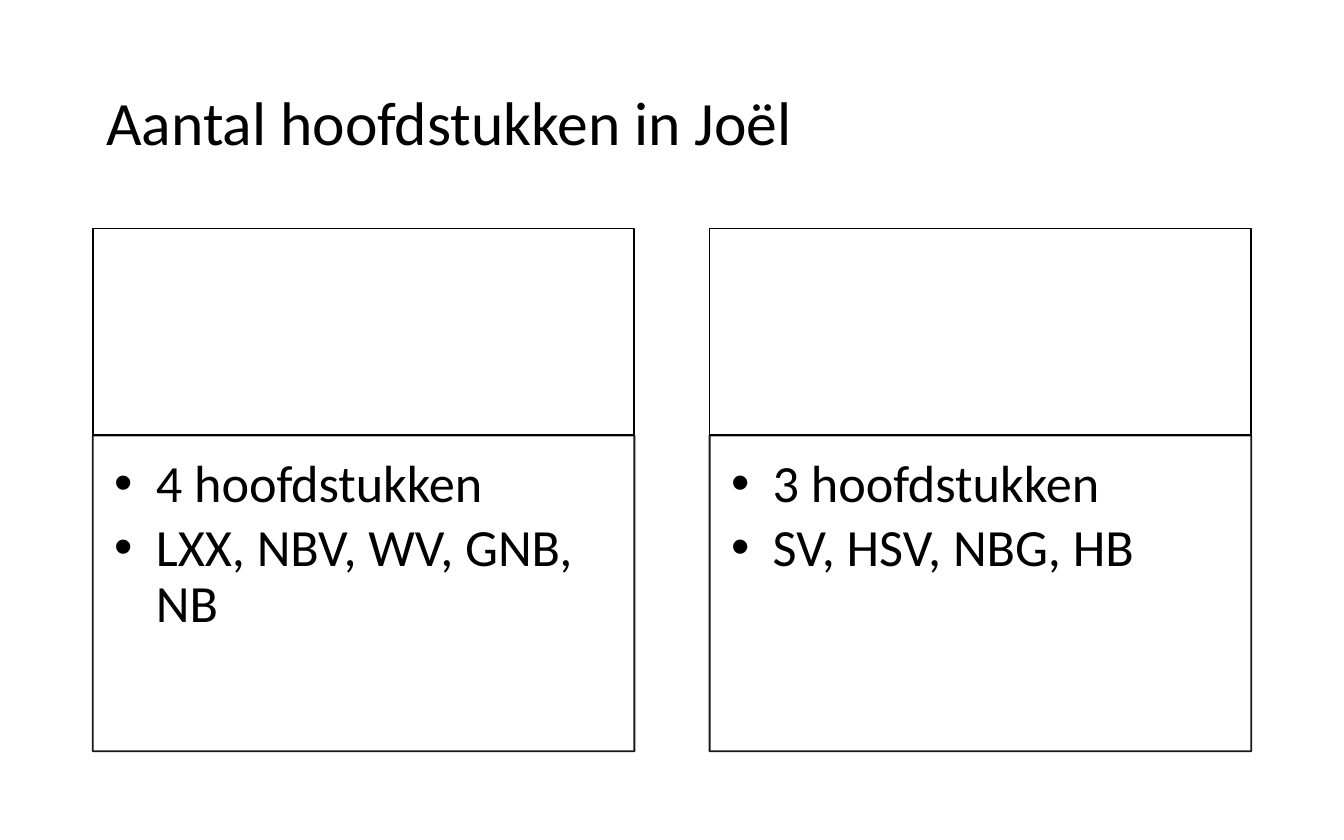
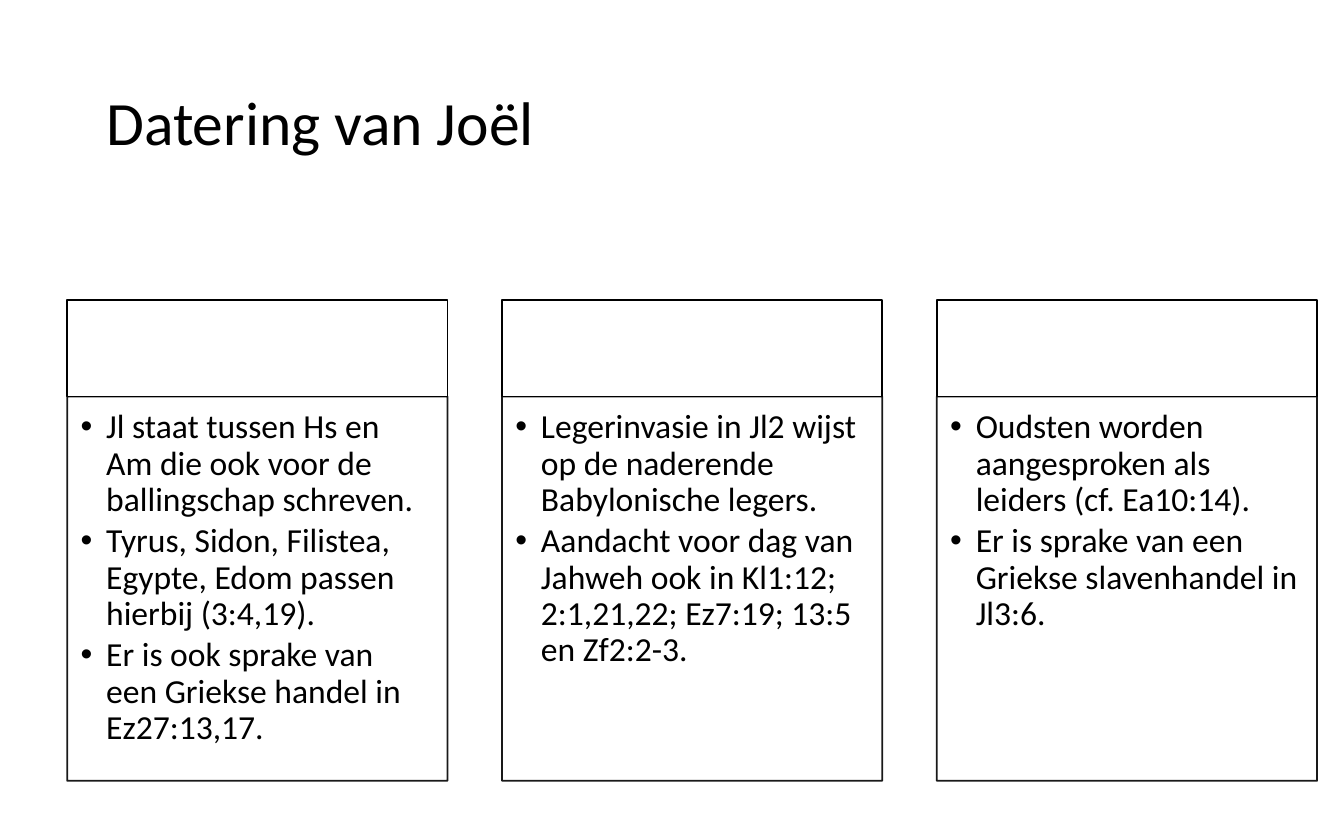
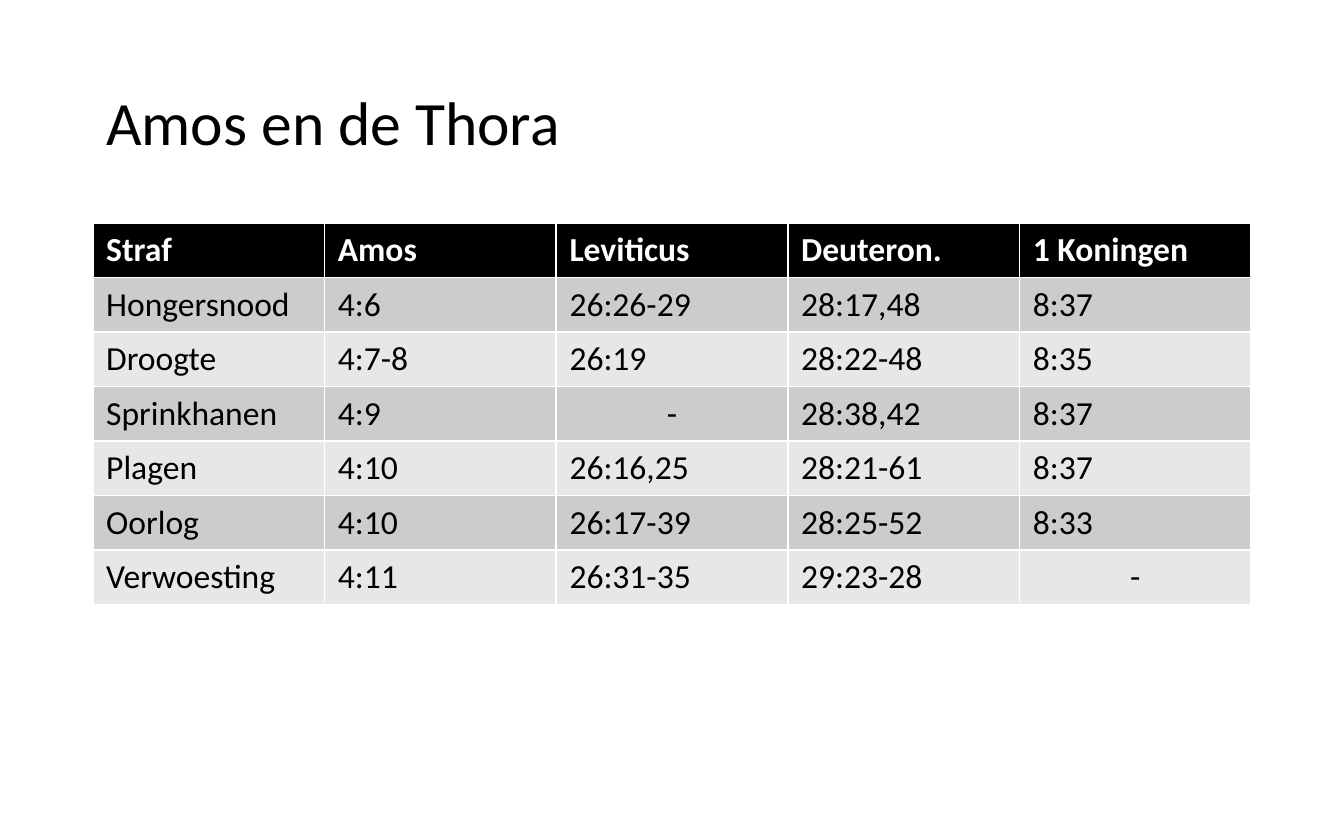
"""Builds three slides on the books of Joël and Amos."""
from lxml.etree import SubElement
from pptx import Presentation
from pptx.dml.color import RGBColor
from pptx.enum.shapes import MSO_SHAPE
from pptx.enum.text import MSO_ANCHOR, MSO_AUTO_SIZE, PP_ALIGN
from pptx.oxml.ns import qn
from pptx.util import Inches, Pt

BLACK = RGBColor(0x00, 0x00, 0x00)
WHITE = RGBColor(0xFF, 0xFF, 0xFF)
DARK_BAND = RGBColor(0xCC, 0xCC, 0xCC)
LIGHT_BAND = RGBColor(0xE7, 0xE7, 0xE7)
FONT = "Calibri"
LEFT, RIGHT = 0.69, 9.31
TWO_CONTENT, COMPARISON, TITLE_ONLY = 3, 4, 5

CHAPTER_COUNTS = [
    ["4 hoofdstukken", "LXX, NBV, WV, GNB, NB"],
    ["3 hoofdstukken", "SV, HSV, NBG, HB"],
]
DATINGS = [
    ["Jl staat tussen Hs en Am die ook voor de ballingschap schreven.",
     "Tyrus, Sidon, Filistea, Egypte, Edom passen hierbij (3:4,19).",
     "Er is ook sprake van een Griekse handel in Ez27:13,17."],
    ["Legerinvasie in Jl2 wijst op de naderende Babylonische legers.",
     "Aandacht voor dag van Jahweh ook in Kl1:12; 2:1,21,22; Ez7:19; 13:5 en Zf2:2-3."],
    ["Oudsten worden aangesproken als leiders (cf. Ea10:14).",
     "Er is sprake van een Griekse slavenhandel in Jl3:6."],
]
PUNISHMENTS = [
    ["Straf", "Amos", "Leviticus", "Deuteron.", "1 Koningen"],
    ["Hongersnood", "4:6", "26:26-29", "28:17,48", "8:37"],
    ["Droogte", "4:7-8", "26:19", "28:22-48", "8:35"],
    ["Sprinkhanen", "4:9", "-", "28:38,42", "8:37"],
    ["Plagen", "4:10", "26:16,25", "28:21-61", "8:37"],
    ["Oorlog", "4:10", "26:17-39", "28:25-52", "8:33"],
    ["Verwoesting", "4:11", "26:31-35", "29:23-28", "-"],
]


def write(frame, lines, *, size=18, color=BLACK, bold=False,
          align=PP_ALIGN.LEFT, spacing=1.0, indent=None):
    """Fill a text frame with one paragraph per line, bulleted if indented."""
    frame.word_wrap = True
    for index, line in enumerate(lines):
        paragraph = frame.add_paragraph() if index else frame.paragraphs[0]
        paragraph.alignment = align
        paragraph.line_spacing = spacing
        paragraph.space_before = Pt(0)
        run = paragraph.add_run()
        run.text = line
        run.font.name, run.font.size, run.font.bold = FONT, Pt(size), bold
        run.font.color.rgb = color
        if indent:
            add_bullet(paragraph, indent)


def add_bullet(paragraph, indent):
    """Give a paragraph a hanging bullet and proportional space below."""
    properties = paragraph._p.get_or_add_pPr()
    properties.set("marL", str(Inches(indent)))
    properties.set("indent", str(-Inches(indent)))
    space_after = SubElement(properties, qn("a:spcAft"))
    SubElement(space_after, qn("a:spcPct"), val="15000")
    SubElement(properties, qn("a:buFont"), typeface="Arial")
    SubElement(properties, qn("a:buChar"), char="•")


def place(shape, left, top, width, height):
    """Move and size a shape, in inches."""
    shape.left, shape.top = Inches(left), Inches(top)
    shape.width, shape.height = Inches(width), Inches(height)


def outline(shape):
    """Give a shape a white fill and a thin black line."""
    shape.fill.solid()
    shape.fill.fore_color.rgb = WHITE
    shape.line.color.rgb = BLACK
    shape.line.width = Pt(1)


class Deck:
    """Holds the presentation, its style and the current slide."""

    def __init__(self):
        """Start an empty presentation."""
        self.presentation = Presentation()
        self.presentation.slide_width = Inches(10)
        self.presentation.slide_height = Inches(6.25)
        self.slide = None

    def new_slide(self, layout, title):
        """Add a slide with its title."""
        self.slide = self.presentation.slides.add_slide(
            self.presentation.slide_layouts[layout])
        heading = self.slide.shapes.title
        place(heading, LEFT, 0.33, RIGHT - LEFT, 1.21)
        frame = heading.text_frame
        frame.auto_size = MSO_AUTO_SIZE.NONE
        frame.vertical_anchor = MSO_ANCHOR.MIDDLE
        write(frame, [title], size=33, spacing=0.9)

    def header(self, left, top, width, height):
        """Add the empty box above a list."""
        box = self.slide.shapes.add_shape(
            MSO_SHAPE.RECTANGLE, Inches(left), Inches(top), Inches(width), Inches(height))
        box.shadow.inherit = False
        outline(box)

    def bullet_list(self, body, lines, bounds, size, indent, insets):
        """Turn a body placeholder into a framed list."""
        place(body, *bounds)
        outline(body)
        for color in body._element.spPr.iter(qn("a:srgbClr")):
            SubElement(color, qn("a:alpha"), val="90000")
        frame = body.text_frame
        frame.auto_size = MSO_AUTO_SIZE.NONE
        frame.vertical_anchor = MSO_ANCHOR.TOP
        (frame.margin_left, frame.margin_top,
         frame.margin_right, frame.margin_bottom) = map(Inches, insets)
        write(frame, lines, size=size, spacing=0.9, indent=indent)

    def columns(self, lists, *, left, right, width, top, split, bottom, size, indent, insets):
        """Spread headed lists evenly and drop unused placeholders."""
        step = (right - left - width) / (len(lists) - 1)
        bodies = list(self.slide.placeholders)[1:]
        for index, (body, lines) in enumerate(zip(bodies, lists)):
            x = left + index * step
            self.header(x, top, width, split - top)
            self.bullet_list(body, lines, (x, split, width, bottom - split),
                             size, indent, insets)
        for unused in bodies[len(lists):]:
            unused._element.getparent().remove(unused._element)

    def table(self, rows, left, top, width, height):
        """Add a banded table with a black header row."""
        grid = self.slide.shapes.add_table(
            len(rows), len(rows[0]), Inches(left), Inches(top),
            Inches(width), Inches(height)).table
        for row, values in enumerate(rows):
            band = (DARK_BAND if row % 2 else LIGHT_BAND) if row else BLACK
            for column, value in enumerate(values):
                cell = grid.cell(row, column)
                cell.fill.solid()
                cell.fill.fore_color.rgb = band
                write(cell.text_frame, [value], bold=row == 0,
                      color=BLACK if row else WHITE,
                      align=PP_ALIGN.CENTER if value == "-" else PP_ALIGN.LEFT)


def main():
    """Build and save the slides."""
    deck = Deck()
    deck.new_slide(TWO_CONTENT, "Aantal hoofdstukken in Joël")
    deck.columns(CHAPTER_COUNTS, left=LEFT, right=RIGHT, width=4.03, top=1.7, split=3.24,
                 bottom=5.59, size=28, indent=0.31, insets=(0.16, 0.16, 0.22, 0.24))
    deck.new_slide(COMPARISON, "Datering van Joël")
    deck.columns(DATINGS, left=0.5, right=9.8, width=2.83, top=2.23, split=2.95,
                 bottom=5.81, size=18, indent=0.19, insets=(0.1, 0.1, 0.14, 0.16))
    deck.new_slide(TITLE_ONLY, "Amos en de Thora")
    deck.table(PUNISHMENTS, LEFT, 1.66, RIGHT - LEFT, 2.84)
    deck.presentation.save("out.pptx")


if __name__ == "__main__":
    main()
